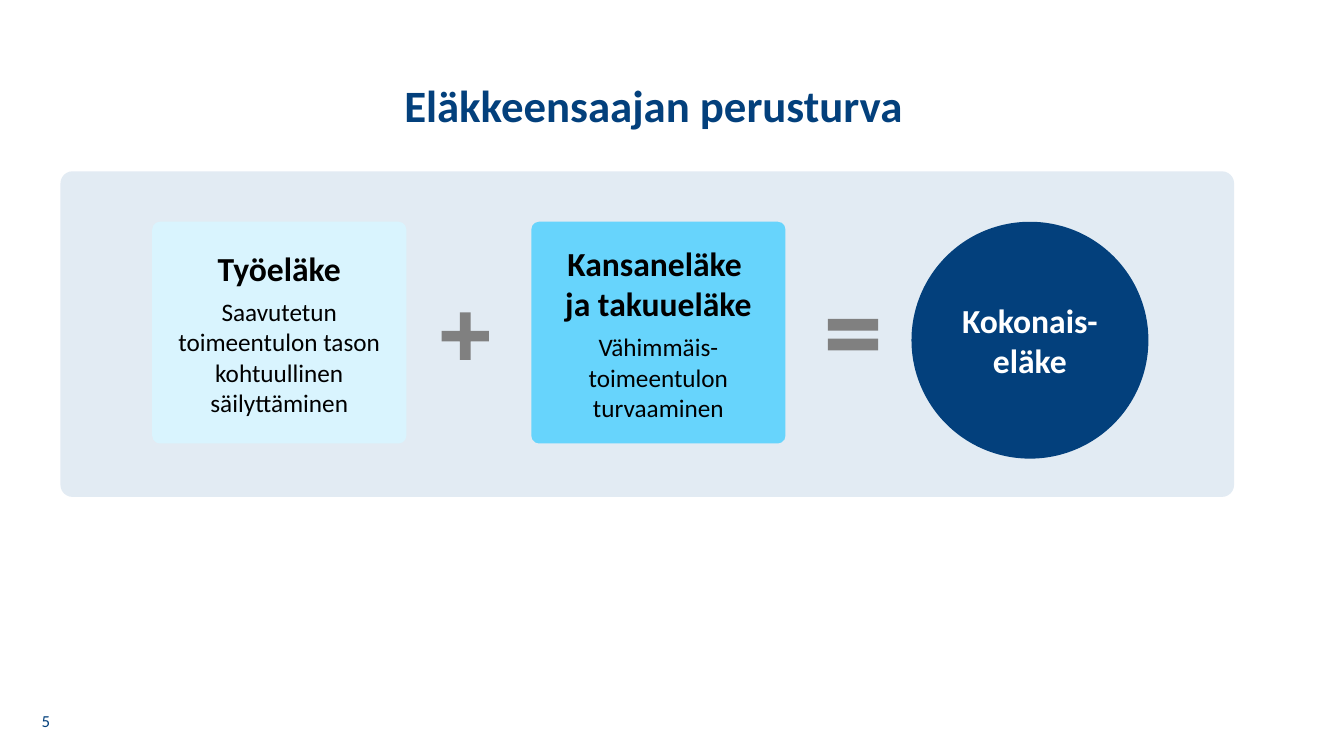
from pptx import Presentation
from pptx import util as u
from pptx.dml.color import RGBColor
from pptx.enum import shapes, text

NAVY = RGBColor(0x03, 0x40, 0x7C)
PANEL = RGBColor(0xE2, 0xEB, 0xF3)
PALE_BLUE = RGBColor(0xD9, 0xF4, 0xFE)
SKY_BLUE = RGBColor(0x67, 0xD4, 0xFC)
GREY = RGBColor(0x80, 0x80, 0x80)
BLACK = RGBColor(0, 0, 0)
WHITE = RGBColor(0xFF, 0xFF, 0xFF)
Shape = shapes.MSO_SHAPE
Anchor = text.MSO_ANCHOR


class PensionSlide:
    """Draws the elements of a slide in one style, with 100 px to the inch."""

    EMU_PER_PX = 9144
    FONT = "Calibri"

    def __init__(self, presentation):
        presentation.slide_width = self.emu(1333)
        presentation.slide_height = self.emu(750)
        self.slide = presentation.slides.add_slide(presentation.slide_layouts[6])

    def emu(self, px):
        return u.Emu(px * self.EMU_PER_PX)

    def fill_text(self, frame, paragraphs, color, anchor=Anchor.MIDDLE):
        frame.word_wrap = True
        frame.vertical_anchor = anchor
        for index, (content, size, bold, space_after) in enumerate(paragraphs):
            paragraph = frame.add_paragraph() if index else frame.paragraphs[0]
            paragraph.alignment = text.PP_ALIGN.CENTER
            paragraph.space_after = u.Pt(space_after)
            for number, line in enumerate(content.split("\n")):
                if number:
                    paragraph.add_line_break()
                run = paragraph.add_run()
                run.text = line
                run.font.name = self.FONT
                run.font.size = u.Pt(size)
                run.font.bold = bold
                run.font.color.rgb = color
        return frame

    def label(self, box, content, size, bold=False, anchor=Anchor.MIDDLE):
        textbox = self.slide.shapes.add_textbox(*map(self.emu, box))
        return self.fill_text(textbox.text_frame, [(content, size, bold, 0)], NAVY, anchor)

    def shape(self, kind, box, fill, adjustments=()):
        shape = self.slide.shapes.add_shape(kind, *map(self.emu, box))
        shape.shadow.inherit = False
        shape.fill.solid()
        shape.fill.fore_color.rgb = fill
        shape.line.fill.background()
        for index, value in enumerate(adjustments):
            shape.adjustments[index] = value
        return shape

    def card(self, left, fill, heading, body):
        card = self.shape(Shape.ROUNDED_RECTANGLE, (left, 220, 252, 220), fill, [0.035])
        self.fill_text(card.text_frame, [(heading, 24, True, 6), (body, 18, False, 0)], BLACK)

    def total(self, box, lines):
        circle = self.shape(Shape.OVAL, box, NAVY)
        self.fill_text(circle.text_frame, [(line, 24, True, 0) for line in lines], WHITE)


def main():
    presentation = Presentation()
    page = PensionSlide(presentation)
    title = page.label((0, 78, 1297, 92), "Eläkkeensaajan perusturva", 32, True, Anchor.TOP)
    title.paragraphs[0].line_spacing = 0.9
    page.label((20, 695, 51, 40), "5", 12)
    page.shape(Shape.ROUNDED_RECTANGLE, (60, 170, 1164, 323), PANEL, [0.037])
    page.card(151, PALE_BLUE, "Työeläke",
              "Saavutetun toimeentulon tason kohtuullinen säilyttäminen")
    page.shape(Shape.CROSS, (438, 310, 47, 47), GREY, [0.388])
    page.card(527, SKY_BLUE, "Kansaneläke \nja takuueläke",
              "Vähimmäis-toimeentulon turvaaminen")
    page.total((904, 220, 235, 235), ["Kokonais-", "eläke"])
    page.shape(Shape.MATH_EQUAL, (812, 298, 68, 68), GREY, [0.172, 0.118])
    presentation.save("out.pptx")


if __name__ == "__main__":
    main()
